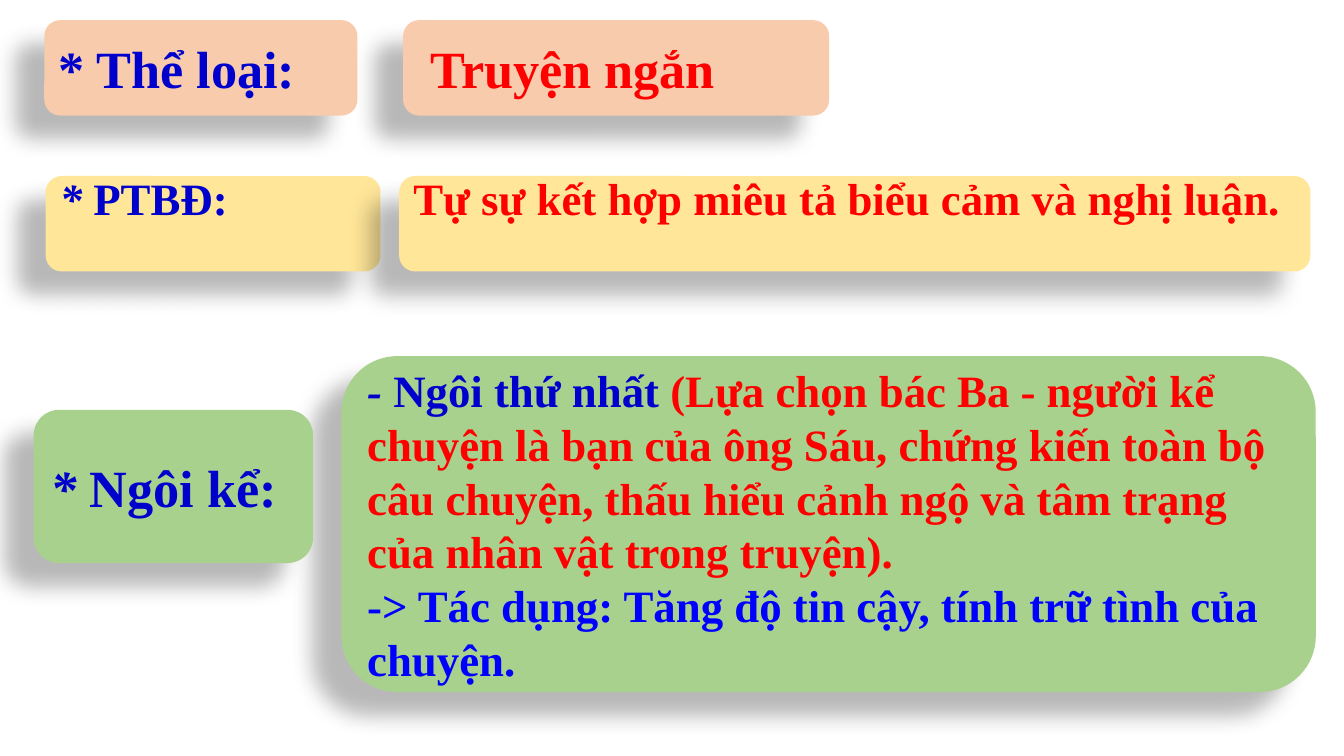
import pptx
import pptx.util
import pptx.dml.color
import pptx.enum.shapes
import pptx.enum.text
import pptx.oxml.ns
import lxml.etree

INCH = pptx.util.Inches
FONT = "Times New Roman"
NAVY, BLUE, RED = "0000CC", "0000FF", "FF0000"
PEACH, YELLOW, GREEN = "F8CBAD", "FFE699", "A9D18E"
JUSTIFY = pptx.enum.text.PP_ALIGN.JUSTIFY
LEFT = pptx.enum.text.PP_ALIGN.LEFT


def rgb(value):
    return pptx.dml.color.RGBColor.from_string(value)


def add_shadow(sp):
    sp.shadow.inherit = False
    effects = sp._element.spPr.find(pptx.oxml.ns.qn("a:effectLst"))
    effects.append(lxml.etree.fromstring(
        f'<a:outerShdw {pptx.oxml.ns.nsdecls("a")} '
        f'blurRad="{pptx.util.Pt(11.8)}" dist="{pptx.util.Pt(19.7)}" '
        f'dir="{141 * 60000}" algn="ctr" rotWithShape="0">'
        '<a:srgbClr val="000000"><a:alpha val="28000"/></a:srgbClr>'
        '</a:outerShdw>'))


def add_card(s, box, fill, paragraphs, size, align, bottom=0.04):
    sp = s.shapes.add_shape(pptx.enum.shapes.MSO_SHAPE.ROUNDED_RECTANGLE,
                            *[INCH(v) for v in box])
    sp.fill.solid()
    sp.fill.fore_color.rgb = rgb(fill)
    sp.line.fill.background()
    add_shadow(sp)
    tf = sp.text_frame
    tf.word_wrap = True
    tf.vertical_anchor = pptx.enum.text.MSO_ANCHOR.MIDDLE
    tf.margin_left = tf.margin_right = INCH(0.07)
    tf.margin_top, tf.margin_bottom = INCH(0.04), INCH(bottom)
    for i, runs in enumerate(paragraphs):
        p = tf.add_paragraph() if i else tf.paragraphs[0]
        p.alignment = align
        for text, color, italic in runs:
            r = p.add_run()
            r.text = text
            r.font.name = FONT
            r.font.size = pptx.util.Pt(size)
            r.font.bold = True
            r.font.italic = italic
            r.font.color.rgb = rgb(color)


def add_genre(s, left, top, height):
    add_card(s, (left, top, 2.33, height), PEACH,
             [[("* Thể loại: ", NAVY, False)]], 28, JUSTIFY)
    add_card(s, (left + 2.67, top, 3.17, height), PEACH,
             [[(" ", NAVY, False), ("Truyện ngắn", RED, False)]], 28, JUSTIFY)


def add_expression(s, left, top, height):
    add_card(s, (left, top, 2.49, height), YELLOW,
             [[("* ", NAVY, True), ("PTBĐ: ", NAVY, False)]],
             24, JUSTIFY, 0.43)
    add_card(s, (left + 2.63, top, 6.78, height), YELLOW,
             [[("Tự sự kết hợp miêu tả biểu cảm và nghị luận.", RED, False)]],
             24, JUSTIFY, 0.43)


def add_narrator(s, left, top, height):
    add_card(s, (left + 2.29, top, 7.25, height), GREEN, [
        [("- ", NAVY, True), ("Ngôi thứ nhất ", NAVY, False),
         ("(Lựa chọn bác Ba - người kể chuyện là bạn của ông Sáu, "
          "chứng kiến toàn bộ câu chuyện, thấu hiểu cảnh ngộ và tâm trạng "
          "của nhân vật trong truyện).", RED, False)],
        [("-> Tác dụng: Tăng độ tin cậy, tính trữ tình của chuyện.",
          BLUE, False)],
    ], 24, LEFT)
    add_card(s, (left, top + 0.4, 2.08, 1.14), GREEN,
             [[("* ", NAVY, True), ("Ngôi kể:", NAVY, False)]], 28, LEFT)


def main():
    prs = pptx.Presentation()
    prs.slide_width, prs.slide_height = INCH(10), INCH(10 * 9 / 16)
    s = prs.slides.add_slide(prs.slide_layouts[6])
    add_genre(s, 0.33, 0.15, 0.71)
    add_expression(s, 0.34, 1.31, 0.71)
    add_narrator(s, 0.25, 2.65, 2.5)
    prs.save("out.pptx")


if __name__ == "__main__":
    main()
